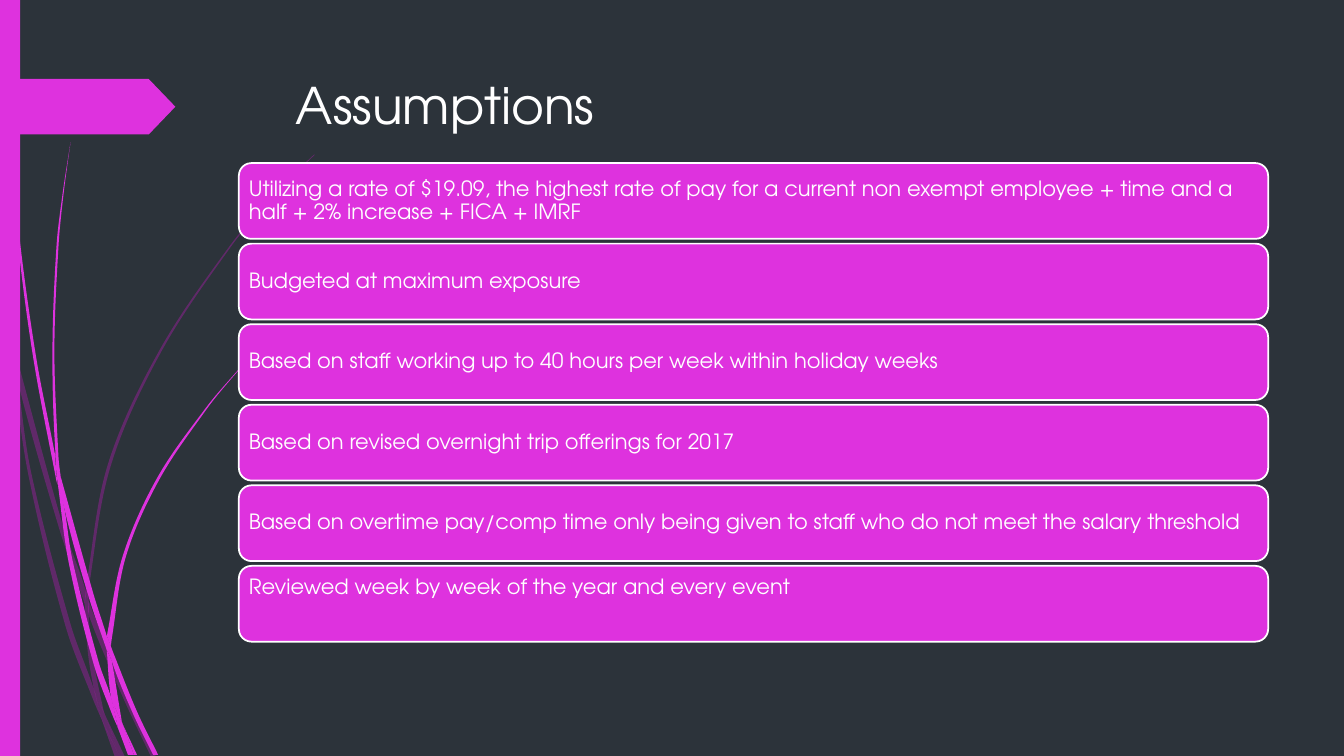
from lxml.etree import SubElement
from pptx import Presentation
from pptx.dml.color import RGBColor
from pptx.enum.shapes import MSO_SHAPE
from pptx.enum.text import MSO_ANCHOR, PP_ALIGN
from pptx.oxml.ns import qn
from pptx.util import Cm, Pt

SLATE = RGBColor(0x2C, 0x33, 0x3A)
MAGENTA = RGBColor(0xDE, 0x32, 0xDE)
PURPLE = RGBColor(0xB0, 0x1C, 0xB0)
WHITE = RGBColor(0xFF, 0xFF, 0xFF)
FONT = "TeX Gyre Adventor"
GRID = 2.54  # centimetres per unit of the grass outlines

# Grass pieces, each the corner points of one closed, curved outline
BACK_GRASS = [
    [(0.11, 3.5), (0.09, 3.22), (0, 2.82), (0, 2.99), (0.1, 3.44)],
    [(0.58, 5.22), (0.84, 5.99), (0.85, 5.86), (0.62, 5.2), (0.14, 3.45),
     (0.17, 3.76)],
    [(0.92, 6.07), (0.88, 5.96), (0.88, 6.1), (1.23, 6.94), (1.5, 7.51),
     (1.55, 7.51), (1.27, 6.92)],
    [(1.19, 7.51), (1.24, 7.51), (1.05, 7.11)],
    [(0.93, 6.83), (0.7, 6.19), (0.31, 4.69), (0.17, 3.76), (0.11, 3.5),
     (0.28, 4.7), (0.65, 6.21), (0.92, 6.93), (1.01, 7.14), (0.99, 7.07)],
    [(0.84, 5.99), (0.87, 6.46), (0.93, 6.83), (0.96, 6.92), (1.05, 7.11),
     (1.03, 7.06), (0.91, 6.46), (0.88, 6.1), (0.88, 6.08)],
    [(0.88, 5.84), (1.1, 4.62), (1.6, 3.49), (2.29, 2.45), (2.68, 1.98),
     (2.9, 1.75), (3.12, 1.54), (3.12, 1.53), (2.89, 1.75), (2.68, 1.97),
     (2.28, 2.44), (1.58, 3.48), (1.07, 4.61), (0.85, 5.84), (0.85, 5.86),
     (0.88, 5.96)],
    [(1.01, 7.14), (1.14, 7.51), (1.19, 7.51)],
    [(0.88, 6.08), (0.88, 6.1), (0.88, 5.96), (0.85, 5.86), (0.84, 5.99)],
    [(0.96, 6.92), (0.93, 6.83), (0.99, 7.07), (1.01, 7.14), (1.19, 7.51),
     (1.05, 7.11)],
]
FRONT_GRASS = [
    [(0.07, 1.1), (0.17, 2.33), (0.33, 3.55), (0.56, 4.77), (0.57, 4.81),
     (0.55, 4.57), (0.55, 4.53), (0.36, 3.55), (0.19, 2.32), (0.08, 1.09),
     (0.05, 0.48), (0.04, 0), (0.03, 0), (0.04, 0.48)],
    [(0.88, 5.92), (1.06, 6.45), (1.06, 6.33), (1.06, 6.31), (0.93, 5.9),
     (0.6, 4.72), (0.64, 5.05)],
    [(1.13, 6.49), (1.1, 6.41), (1.11, 6.56), (1.32, 7.08), (1.52, 7.49),
     (1.57, 7.49), (1.36, 7.06)],
    [(1.1, 6.91), (0.98, 6.57), (0.72, 5.56), (0.64, 5.05), (0.57, 4.77),
     (0.68, 5.57), (0.93, 6.59), (1.11, 7.08), (1.17, 7.22), (1.16, 7.17)],
    [(0.6, 4.72), (0.58, 4.53), (0.54, 3.49), (0.58, 2.45), (0.63, 1.93),
     (0.7, 1.41), (0.62, 1.93), (0.56, 2.45), (0.52, 3.49), (0.55, 4.49)],
    [(1.33, 7.49), (1.36, 7.49), (1.22, 7.19)],
    [(0.57, 4.77), (0.64, 5.05), (0.6, 4.72), (0.55, 4.49), (0.55, 4.53)],
    [(1.11, 6.33), (1.25, 5.52), (1.58, 4.76), (2.05, 4.06), (2.31, 3.74),
     (2.45, 3.59), (2.61, 3.44), (2.6, 3.44), (2.45, 3.58), (2.31, 3.73),
     (2.04, 4.05), (1.56, 4.74), (1.22, 5.51), (1.06, 6.31), (1.1, 6.41)],
    [(1.17, 7.22), (1.27, 7.49), (1.31, 7.49)],
    [(1.06, 6.45), (1.1, 6.91), (1.16, 7.06), (1.22, 7.19), (1.21, 7.16),
     (1.11, 6.56), (1.09, 6.51)],
    [(1.06, 6.45), (1.09, 6.51), (1.11, 6.56), (1.1, 6.41), (1.06, 6.31),
     (1.06, 6.33)],
    [(1.16, 7.06), (1.1, 6.91), (1.16, 7.17), (1.17, 7.22), (1.3, 7.49),
     (1.33, 7.49), (1.22, 7.19)],
]
ASSUMPTIONS = [
    "Utilizing a rate of $19.09, the highest rate of pay for a current non "
    "exempt employee + time and a half + 2% increase + FICA + IMRF",
    "Budgeted at maximum exposure",
    "Based on staff working up to 40 hours per week within holiday weeks",
    "Based on revised overnight trip offerings for 2017",
    "Based on overtime pay/comp time only being given to staff who do not "
    "meet the salary threshold",
    "Reviewed week by week of the year and every event",
]


def curve_sides(shape):
    """Turn the straight sides into Bézier curves, keeping sharp corners."""
    ring = [complex(int(pt.get("x")), int(pt.get("y")))
            for pt in shape._element.iter(qn("a:pt"))][:-1]
    following = ring[1:] + ring[:1]
    tangents = []
    for before, here, after in zip(ring[-1:] + ring, ring, following):
        arriving, leaving = here - before, after - here
        alignment = (arriving.conjugate() * leaving).real
        is_smooth = alignment > 0.9 * abs(arriving) * abs(leaving)
        tangents.append((after - before) / abs(after - before) if is_smooth else 0)
    sides = list(shape._element.iter(qn("a:lnTo")))
    for side, start, end, out_of, into in zip(
            sides, ring, following, tangents, tangents[1:] + tangents[:1]):
        third = (end - start) / 3
        controls = [start + (out_of * abs(third) or third),
                    end - (into * abs(third) or third)]
        side.tag = qn("a:cubicBezTo")
        for position, control in enumerate(controls):
            pt = SubElement(side, qn("a:pt"), x=str(round(control.real)),
                            y=str(round(control.imag)))
            side.insert(position, pt)


def paint(shape, color):
    shape.shadow.inherit = False
    shape.fill.solid()
    shape.fill.fore_color.rgb = color
    shape.line.fill.background()


prs = Presentation()
prs.slide_width, prs.slide_height = Cm(33.87), Cm(19.05)
slide = prs.slides.add_slide(prs.slide_layouts[6])
slide.background.fill.solid()
slide.background.fill.fore_color.rgb = SLATE
shapes = slide.shapes

# Grass
for pieces, color, opacity in [(BACK_GRASS, PURPLE, 40), (FRONT_GRASS, MAGENTA, 100)]:
    for corners in pieces:
        outline = [(Cm(x * GRID), Cm(y * GRID)) for x, y in corners]
        builder = shapes.build_freeform(*outline[0])
        builder.add_line_segments(outline[1:] + outline[:1], close=True)
        piece = builder.convert_to_shape()
        curve_sides(piece)
        paint(piece, color)
        if opacity < 100:
            rgb = piece.fill._xPr.find(qn("a:solidFill"))[0]
            SubElement(rgb, qn("a:alpha")).set("val", str(opacity * 1000))

# Side bar and page marker
side_bar = shapes.add_shape(MSO_SHAPE.RECTANGLE, 0, 0, Cm(0.51), prs.slide_height)
paint(side_bar, MAGENTA)
marker = shapes.add_shape(MSO_SHAPE.PENTAGON, 0, Cm(1.99), Cm(4.42), Cm(1.4))
marker.adjustments[0] = 0.48
paint(marker, MAGENTA)

# Heading
heading = shapes.add_textbox(Cm(7.21), Cm(1.75), Cm(24.77), Cm(3.56)).text_frame
heading.word_wrap = True
heading.text = "Assumptions"
heading_font = heading.paragraphs[0].font
heading_font.name, heading_font.size = FONT, Pt(36)
heading_font.color.rgb = WHITE

# Assumption boxes
for index, assumption in enumerate(ASSUMPTIONS):
    box = shapes.add_shape(MSO_SHAPE.ROUNDED_RECTANGLE, Cm(6.02),
                           Cm(4.11 + 2.03 * index), Cm(25.94), Cm(1.91))
    paint(box, MAGENTA)
    box.line.color.rgb = WHITE
    box.line.width = Pt(1.25)
    frame = box.text_frame
    frame.word_wrap = True
    frame.vertical_anchor = MSO_ANCHOR.MIDDLE
    frame.margin_left = frame.margin_right = Cm(0.16)
    frame.margin_top = frame.margin_bottom = Cm(0.16)
    frame.text = assumption
    paragraph = frame.paragraphs[0]
    paragraph.alignment = PP_ALIGN.LEFT
    paragraph.line_spacing = 0.9
    paragraph.font.name, paragraph.font.size = FONT, Pt(15)
    paragraph.font.color.rgb = WHITE

# The last assumption sits higher in its box
frame.margin_bottom = Cm(0.96)

prs.save("out.pptx")
